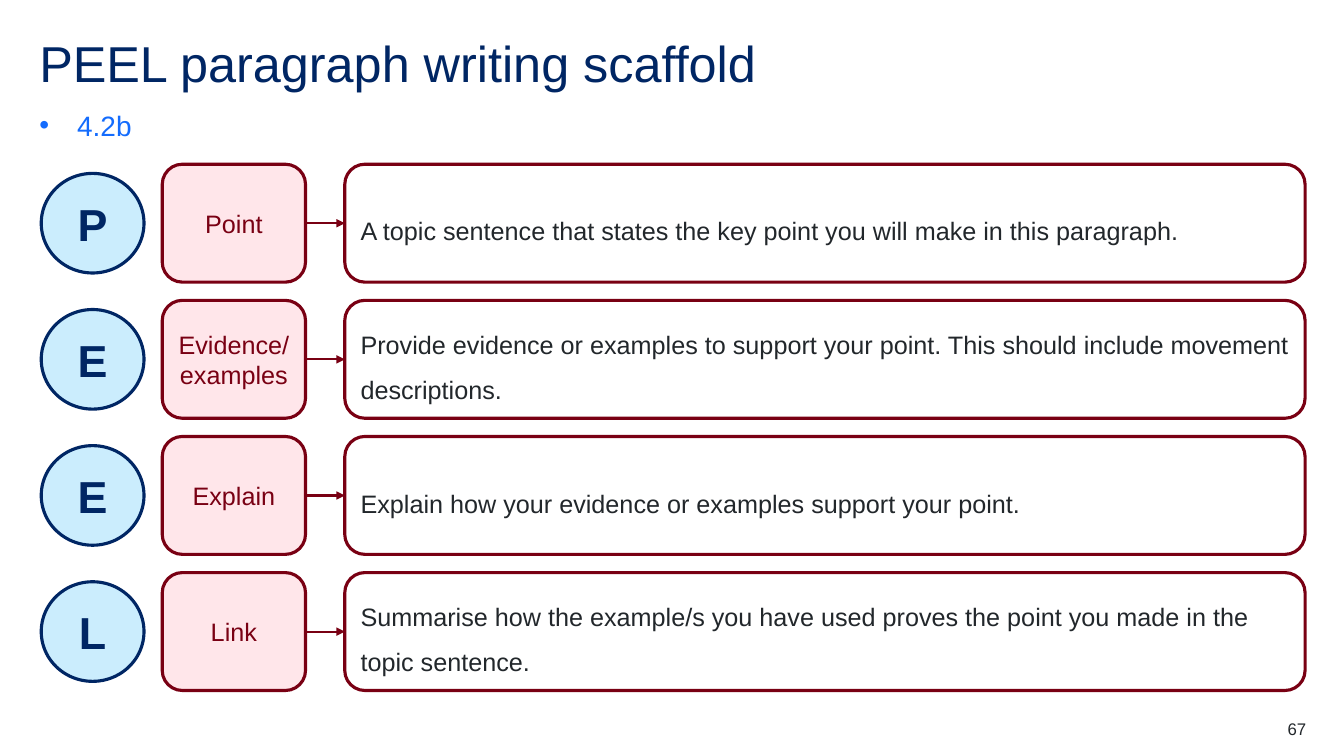
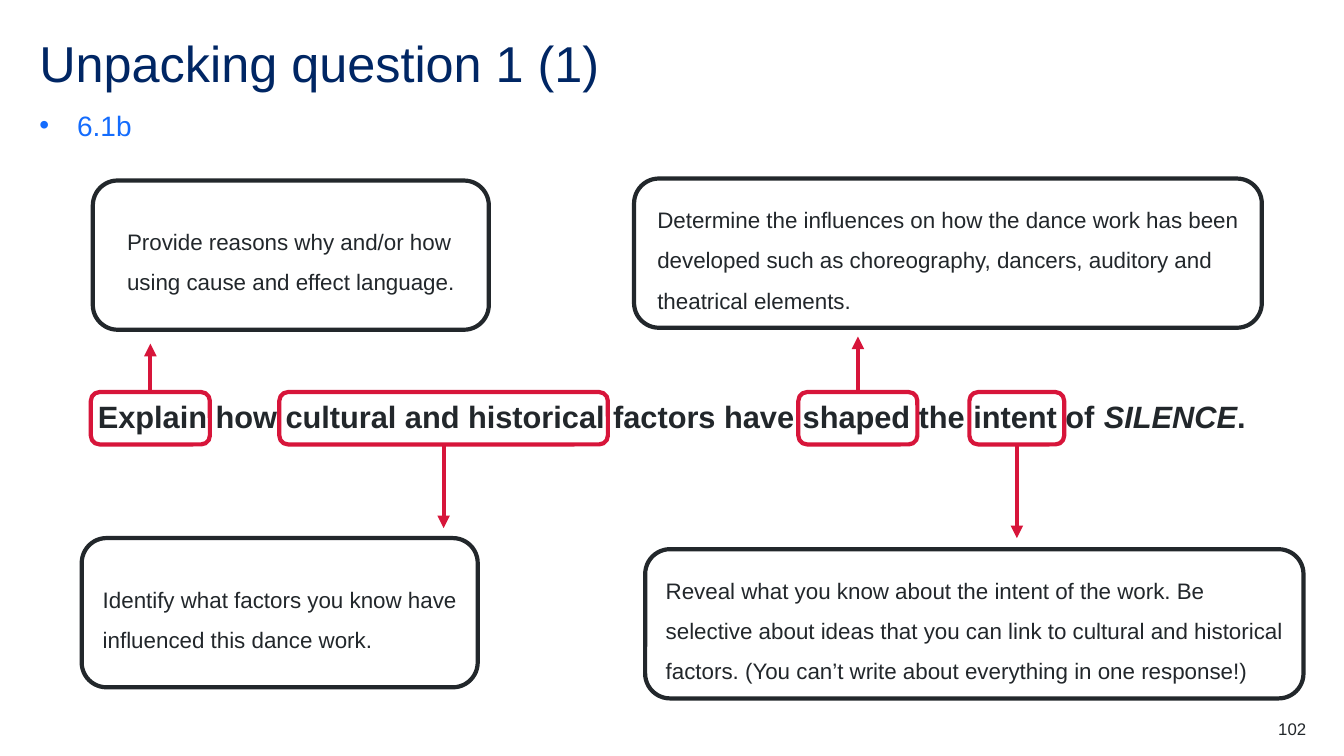
from pptx import Presentation
from pptx.dml.color import RGBColor
from pptx.enum.shapes import MSO_CONNECTOR, MSO_SHAPE
from pptx.enum.text import MSO_ANCHOR, MSO_AUTO_SIZE, PP_ALIGN
from pptx.oxml.ns import qn
from pptx.oxml.xmlchemy import OxmlElement
from pptx.util import Cm, Pt

LEFT, CENTER, RIGHT = PP_ALIGN.LEFT, PP_ALIGN.CENTER, PP_ALIGN.RIGHT
TOP, MIDDLE, BOTTOM = MSO_ANCHOR.TOP, MSO_ANCHOR.MIDDLE, MSO_ANCHOR.BOTTOM
ELLIPSE, ROUNDED = MSO_SHAPE.OVAL, MSO_SHAPE.ROUNDED_RECTANGLE
STRAIGHT = MSO_CONNECTOR.STRAIGHT
SITE_TOP, SITE_LEFT, SITE_BOTTOM, SITE_RIGHT = range(4)

FONT = "Arial"
NAVY = RGBColor(0x00, 0x26, 0x64)
BLUE = RGBColor(0x14, 0x6C, 0xFD)
PALE_BLUE = RGBColor(0xCB, 0xED, 0xFD)
MAROON = RGBColor(0x79, 0x00, 0x13)
PALE_PINK = RGBColor(0xFF, 0xE6, 0xEA)
RED = RGBColor(0xD7, 0x15, 0x3A)
INK = RGBColor(0x22, 0x27, 0x2B)

# Letter, label, description
PEEL_ROWS = [
    ("P", "Point",
     "A topic sentence that states the key point you will make in this paragraph."),
    ("E", "Evidence/examples",
     "Provide evidence or examples to support your point. "
     "This should include movement descriptions."),
    ("E", "Explain",
     "Explain how your evidence or examples support your point."),
    ("L", "Link",
     "Summarise how the example/s you have used proves the point you made "
     "in the topic sentence."),
]
ROW_TOP, ROW_HEIGHT, ROW_PITCH = 4.14, 2.97, 3.43
CIRCLE_LEFT, CIRCLE_WIDTH, CIRCLE_HEIGHT = 1.04, 2.59, 2.51
LABEL_LEFT, LABEL_WIDTH = 4.09, 3.61
DESCRIPTION_LEFT, DESCRIPTION_WIDTH = 8.69, 24.2

# Text, italic
QUESTION = [
    ("Explain how cultural and historical factors have shaped the intent of ", False),
    ("SILENCE", True),
    (".", False),
]
WORD_TOP, WORD_HEIGHT = 9.88, 1.32
# Left and width of the frame round a key word, height of its arrow tip
KEY_WORDS = [
    (2.29, 3.0, 8.66),
    (7.04, 8.28, 13.31),
    (20.12, 3.0, 8.48),
    (24.43, 2.39, 13.56),
]
CALLOUT_HEIGHT = 3.76
# Left, top, width, text
CALLOUTS = [
    (2.34, 4.55, 9.98,
     "Provide reasons why and/or how using cause and effect language."),
    (2.06, 13.56, 9.98,
     "Identify what factors you know have influenced this dance work."),
    (15.98, 4.5, 15.82,
     "Determine the influences on how the dance work has been developed such as "
     "choreography, dancers, auditory and theatrical elements."),
    (16.26, 13.84, 16.59,
     "Reveal what you know about the intent of the work. Be selective about ideas "
     "that you can link to cultural and historical factors. "
     "(You can’t write about everything in one response!)"),
]


def place(shape, left, top, width, height):
    shape.left, shape.top = Cm(left), Cm(top)
    shape.width, shape.height = Cm(width), Cm(height)


def set_frame(shape, anchor, horizontal=0, vertical=0):
    """Wrap the text, anchor it and set its insets in centimetres."""
    frame = shape.text_frame
    frame.word_wrap = True
    frame.auto_size = MSO_AUTO_SIZE.NONE
    frame.vertical_anchor = anchor
    frame.margin_left = frame.margin_right = Cm(horizontal)
    frame.margin_top = frame.margin_bottom = Cm(vertical)
    return frame


def format_paragraph(paragraph, size, color, bold=False, align=LEFT, spacing=1.0, after=0):
    paragraph.alignment = align
    paragraph.line_spacing = spacing
    paragraph.space_before = Pt(0)
    paragraph.space_after = Pt(after)
    font = paragraph.font
    font.name, font.size, font.bold = FONT, Pt(size), bold
    font.color.rgb = color


def write(frame, text, size, color, **options):
    frame.text = text
    format_paragraph(frame.paragraphs[0], size, color, **options)


def remove_bullet(paragraph):
    properties = paragraph._p.get_or_add_pPr()
    properties.set("marL", "0")
    properties.set("indent", "0")
    properties.append(OxmlElement("a:buNone"))


def add_page(presentation, title, section, number):
    """Add a slide with its title, section number and page number."""
    slide = presentation.slides.add_slide(presentation.slide_layouts[1])
    heading, body = slide.shapes.title, slide.placeholders[1]
    place(heading, 0.99, 0.99, 31.9, 1.52)
    write(set_frame(heading, TOP), title, 36, NAVY, spacing=0.9)
    place(body, 0.99, 2.72, 31.9, 0.86)
    frame = set_frame(body, BOTTOM)
    remove_bullet(frame.paragraphs[0])
    write(frame, section, 20, BLUE, spacing=1.5, after=12)
    page_number = slide.shapes.add_textbox(Cm(30.91), Cm(18.11), Cm(2.01), Cm(0.51))
    write(set_frame(page_number, TOP), number, 12, INK, align=RIGHT)
    return slide


def add_outlined(slide, kind, box, color, weight, fill=None):
    shape = slide.shapes.add_shape(kind, *map(Cm, box))
    shape.shadow.inherit = False
    shape.line.color.rgb = color
    shape.line.width = Pt(weight)
    if fill is None:
        shape.fill.background()
    else:
        shape.fill.solid()
        shape.fill.fore_color.rgb = fill
    return shape


def add_arrow(slide, begin, end, color, weight):
    arrow = slide.shapes.add_connector(STRAIGHT, *map(Cm, (*begin, *end)))
    arrow.line.color.rgb = color
    arrow.line.width = Pt(weight)
    properties = arrow._element.spPr
    head = OxmlElement("a:tailEnd")
    head.set("type", "triangle")
    properties.find(qn("a:ln")).append(head)
    properties.append(OxmlElement("a:effectLst"))
    return arrow


def add_peel_row(slide, top, letter, label, description):
    middle = top + ROW_HEIGHT / 2
    circle = add_outlined(
        slide, ELLIPSE,
        (CIRCLE_LEFT, middle - CIRCLE_HEIGHT / 2, CIRCLE_WIDTH, CIRCLE_HEIGHT),
        NAVY, 2.25, PALE_BLUE)
    write(set_frame(circle, MIDDLE, 0.25, 0.13), letter, 32, NAVY, bold=True, align=CENTER)

    label_box = add_outlined(
        slide, ROUNDED, (LABEL_LEFT, top, LABEL_WIDTH, ROW_HEIGHT), MAROON, 2.25, PALE_PINK)
    write(set_frame(label_box, MIDDLE, 0.25, 0.13), label, 18, MAROON, align=CENTER, after=6)

    description_box = add_outlined(
        slide, ROUNDED, (DESCRIPTION_LEFT, top, DESCRIPTION_WIDTH, ROW_HEIGHT), MAROON, 2.25)
    write(set_frame(description_box, MIDDLE, 0.25, 0.13), description, 18, INK,
          spacing=1.5, after=12)
    for box in (label_box, description_box):
        box.adjustments[0] = 0.17

    arrow = add_arrow(slide, (LABEL_LEFT + LABEL_WIDTH, middle),
                      (DESCRIPTION_LEFT, middle), MAROON, 1.5)
    arrow.begin_connect(label_box, SITE_RIGHT)
    arrow.end_connect(description_box, SITE_LEFT)


def add_key_word(slide, left, width, tip):
    """Frame a word of the question and point an arrow from it to its callout."""
    frame = add_outlined(slide, ROUNDED, (left, WORD_TOP, width, WORD_HEIGHT), RED, 3)
    center = left + width / 2
    upward = tip < WORD_TOP
    start = WORD_TOP if upward else WORD_TOP + WORD_HEIGHT
    arrow = add_arrow(slide, (center, start), (center, tip), RED, 3)
    arrow.begin_connect(frame, SITE_TOP if upward else SITE_BOTTOM)


def add_callout(slide, left, top, width, text):
    callout = add_outlined(slide, ROUNDED, (left, top, width, CALLOUT_HEIGHT), INK, 3)
    frame = set_frame(callout, MIDDLE, 0.25, 0.25)
    write(frame, text, 16, INK, spacing=1.5, after=12)
    # Centre the left-aligned block of lines in the box
    frame._txBody.bodyPr.set("anchorCtr", "1")


def add_question(slide):
    box = slide.shapes.add_textbox(Cm(0.61), Cm(WORD_TOP), Cm(32.64), Cm(1.19))
    paragraph = set_frame(box, TOP, 0.25, 0.13).paragraphs[0]
    for text, italic in QUESTION:
        run = paragraph.add_run()
        run.text = text
        run.font.italic = italic
    format_paragraph(paragraph, 22, INK, bold=True, align=CENTER)


def main():
    presentation = Presentation()
    presentation.slide_width, presentation.slide_height = Cm(33.87), Cm(19.05)

    scaffold = add_page(presentation, "PEEL paragraph writing scaffold", "4.2b", "67")
    for index, row in enumerate(PEEL_ROWS):
        add_peel_row(scaffold, ROW_TOP + index * ROW_PITCH, *row)

    unpacking = add_page(presentation, "Unpacking question 1 (1)", "6.1b", "102")
    add_question(unpacking)
    for key_word in KEY_WORDS:
        add_key_word(unpacking, *key_word)
    for callout in CALLOUTS:
        add_callout(unpacking, *callout)

    presentation.save("out.pptx")


if __name__ == "__main__":
    main()
